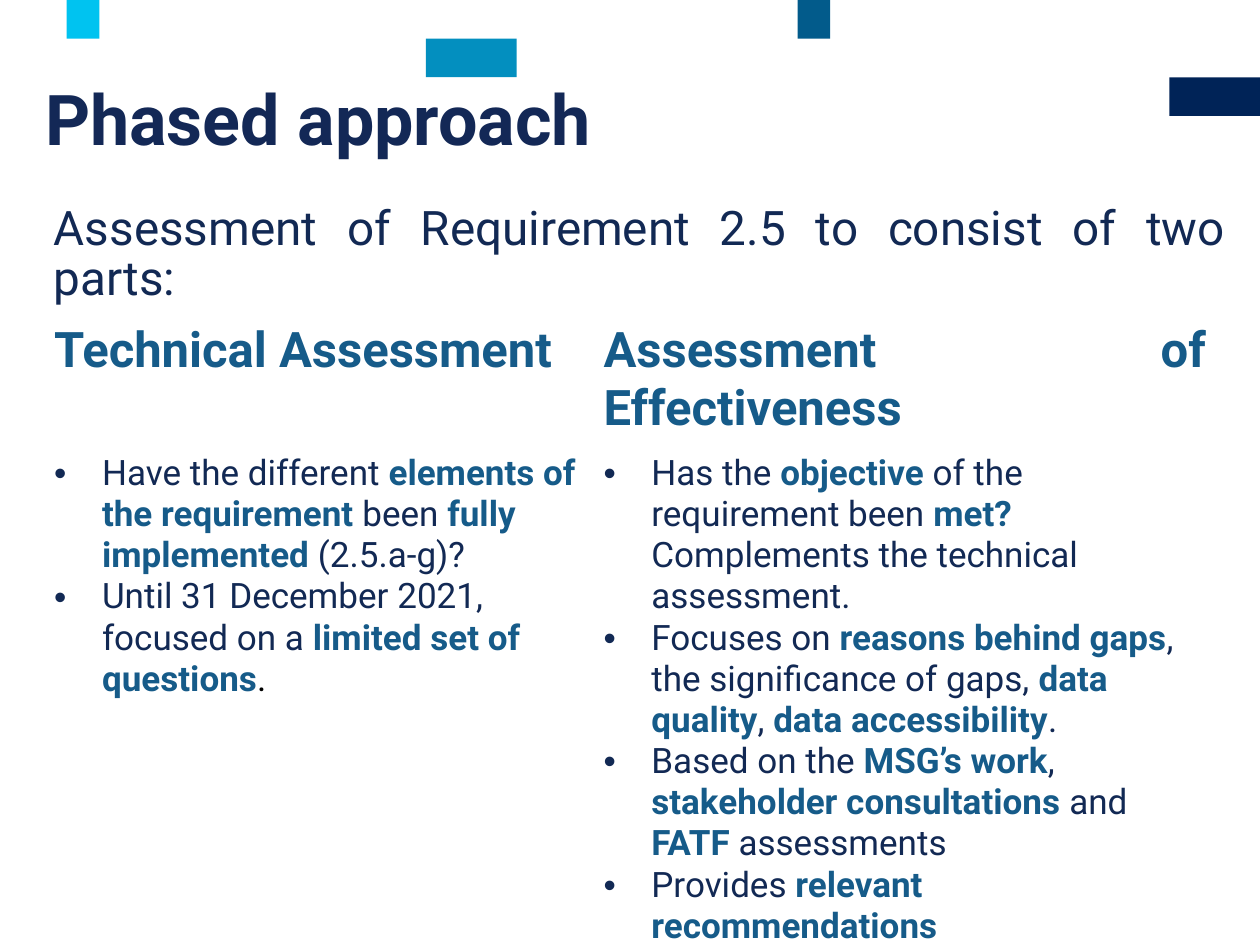
from dataclasses import dataclass

from lxml.etree import SubElement
from pptx import Presentation
from pptx.dml.color import RGBColor
from pptx.enum.shapes import MSO_SHAPE
from pptx.enum.text import MSO_ANCHOR, PP_ALIGN
from pptx.oxml.ns import qn
from pptx.util import Inches, Pt


@dataclass(frozen=True)
class Theme:
    font: str = "Roboto"
    title_color: str = "132856"
    text_color: str = "122954"
    strong_color: str = "165B89"
    stop_color: str = "000100"
    bar_colors: tuple = ("002357", "025B8B", "038FBF", "00C3F0")
    title_size: float = 40
    intro_size: float = 27.2
    heading_size: float = 28
    body_size: float = 20


THEME = Theme()

# Heading and bullets of each column; ** marks strong words
COLUMNS = [
    ("Technical Assessment", [
        "Have the different **elements of the requirement **been** fully implemented **(2.5.a-g)?",
        "Until 31 December 2021, focused on a **limited set of questions**",
    ]),
    ("Assessment of Effectiveness", [
        "Has the **objective **of the requirement been **met? **Complements the technical assessment.",
        "Focuses on **reasons behind gaps**, the significance of gaps, "
        "**data quality**, **data accessibility**.",
        "Based on the **MSG’s work**, **stakeholder consultations **and **FATF **assessments",
        "Provides **relevant recommendations**",
    ]),
]


def add_run(paragraph, text, size, color, bold=False):
    run = paragraph.add_run()
    run.text = text
    run.font.name = THEME.font
    run.font.size = Pt(size)
    run.font.bold = bold
    run.font.color.rgb = RGBColor.from_string(color)


def write_text(paragraph, text, size, color, bold=False, align=PP_ALIGN.LEFT,
               line_spacing=None, space_after=0, bullet=False):
    """Fill a paragraph; parts between ** are bold in the strong colour."""
    if bullet:
        properties = paragraph._p.get_or_add_pPr()
        indent = Inches(0.38)
        properties.set("marL", str(indent))
        properties.set("indent", str(-indent))
        SubElement(properties, qn("a:buFont")).set("typeface", "Arial")
        SubElement(properties, qn("a:buChar")).set("char", "•")
    paragraph.alignment = align
    paragraph.space_after = Pt(space_after)
    if line_spacing:
        paragraph.line_spacing = line_spacing
    for index, part in enumerate(text.split("**")):
        strong = index % 2 == 1
        if part:
            add_run(paragraph, part, size,
                    THEME.strong_color if strong else color, bold or strong)


def add_text_box(slide, box, text, **text_format):
    frame = slide.shapes.add_textbox(*map(Inches, box)).text_frame
    frame.word_wrap = True
    frame.vertical_anchor = MSO_ANCHOR.TOP
    write_text(frame.paragraphs[0], text, **text_format)


def add_bars(slide, box):
    """Stepped bars along the top; each takes one third of the band height."""
    left, top, width, height = box
    step = height / 3
    bars = [(9.28, 2, 0.72), (6.33, 0, 0.26), (3.38, 1, 0.72), (0.53, 0, 0.26)]
    for (offset, row, bar_width), color in zip(bars, THEME.bar_colors):
        bar = slide.shapes.add_shape(
            MSO_SHAPE.RECTANGLE, Inches(left + offset), Inches(top + row * step),
            Inches(bar_width), Inches(step))
        bar.shadow.inherit = False
        bar.fill.solid()
        bar.fill.fore_color.rgb = RGBColor.from_string(color)
        bar.line.fill.background()


def add_comparison(slide, box):
    """Two-column table: headings above bulleted explanations."""
    table = slide.shapes.add_table(2, len(COLUMNS), *map(Inches, box)).table
    table.first_row = False
    table.horz_banding = False
    for column, width in zip(table.columns, (4.36, 4.98)):
        column.width = Inches(width)
    for row, height in zip(table.rows, (0.46, 3.96)):
        row.height = Inches(height)
    for cell in table.iter_cells():
        cell.fill.background()

    for index, (heading, bullets) in enumerate(COLUMNS):
        write_text(table.cell(0, index).text_frame.paragraphs[0], heading,
                   size=THEME.heading_size, color=THEME.strong_color, bold=True,
                   align=PP_ALIGN.JUSTIFY, space_after=12)
        frame = table.cell(1, index).text_frame
        for number, bullet in enumerate(bullets):
            paragraph = frame.add_paragraph() if number else frame.paragraphs[0]
            write_text(paragraph, bullet, size=THEME.body_size,
                       color=THEME.text_color, bullet=True)
    # Closing full stop of the first column is near black
    last_paragraph = table.cell(1, 0).text_frame.paragraphs[-1]
    add_run(last_paragraph, ".", THEME.body_size, THEME.stop_color)


def main():
    presentation = Presentation()
    presentation.slide_width = Inches(10)
    presentation.slide_height = Inches(7.5)
    slide = presentation.slides.add_slide(presentation.slide_layouts[6])

    add_bars(slide, (0, 0, 10, 0.92))
    # Introduction and title
    add_text_box(slide, (0.33, 1.58, 9.5, 0.66),
                 "Assessment of Requirement 2.5 to consist of two parts:",
                 size=THEME.intro_size, color=THEME.text_color,
                 align=PP_ALIGN.JUSTIFY, line_spacing=0.88, space_after=12)
    add_text_box(slide, (0.26, 0.63, 8.95, 0.83), "Phased approach",
                 size=THEME.title_size, color=THEME.title_color, bold=True,
                 line_spacing=0.89)
    add_comparison(slide, (0.33, 2.51, 9.34, 4.42))

    presentation.save("out.pptx")


if __name__ == "__main__":
    main()
